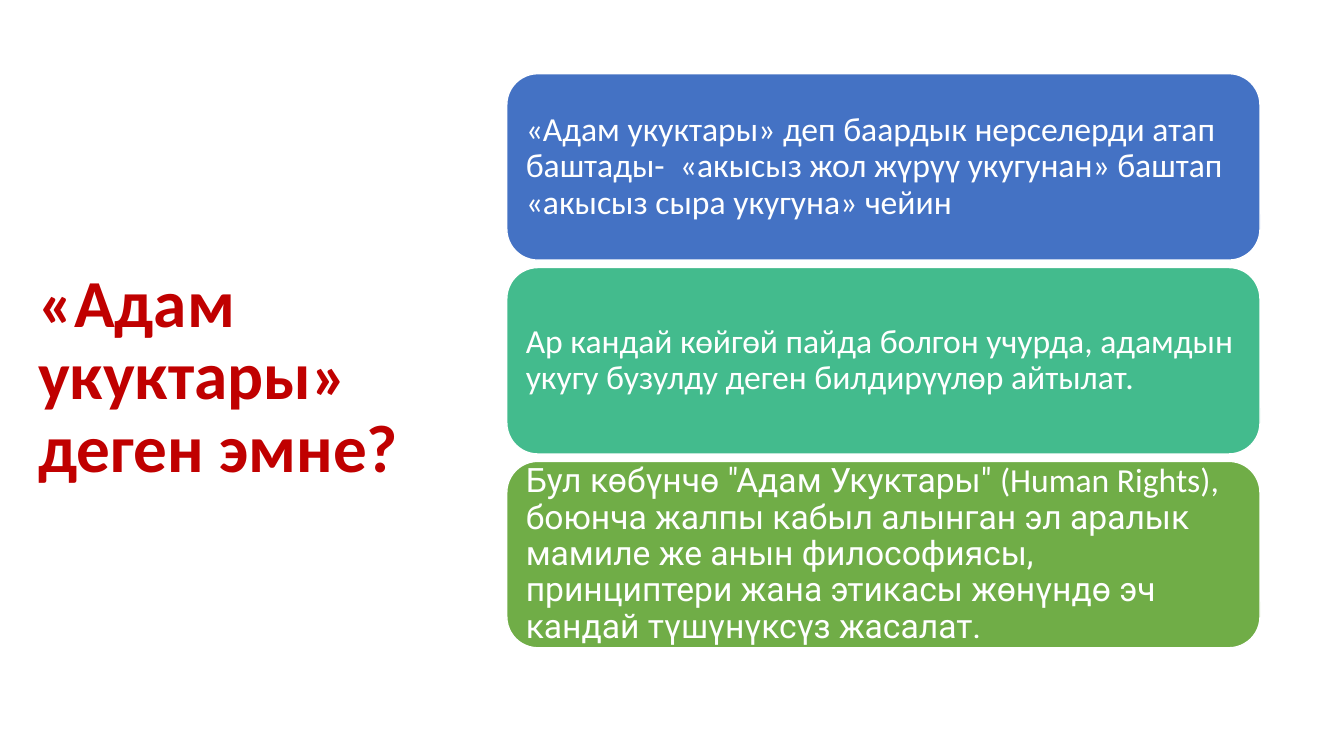
from pptx import Presentation
from pptx.dml.color import RGBColor
from pptx.enum.shapes import MSO_SHAPE
from pptx.enum.text import MSO_ANCHOR, MSO_AUTO_SIZE, PP_ALIGN
from pptx.util import Inches, Pt

ROUNDED = MSO_SHAPE.ROUNDED_RECTANGLE
MIDDLE = MSO_ANCHOR.MIDDLE
NO_FIT = MSO_AUTO_SIZE.NONE
LEFT = PP_ALIGN.LEFT

RED = RGBColor(0xC0, 0x00, 0x00)
WHITE = RGBColor(0xFF, 0xFF, 0xFF)
BLUE = RGBColor(0x44, 0x72, 0xC4)
TEAL = RGBColor(0x43, 0xBB, 0x8D)
GREEN = RGBColor(0x70, 0xAD, 0x47)

BODY_FONT = "Calibri"
ACCENT_FONT = "Roboto"
COLUMNS, ROWS = 48, 39
TITLE_ONLY = 5

TITLE = "«Адам укуктары» деген эмне?"
CARDS = [
    (BLUE, [("«Адам укуктары» деп баардык нерселерди атап баштады-  «акысыз жол "
             "жүрүү укугунан» баштап «акысыз сыра укугуна» чейин", BODY_FONT)]),
    (TEAL, [("Ар кандай көйгөй пайда болгон учурда, адамдын укугу бузулду деген "
             "билдирүүлөр айтылат.", BODY_FONT)]),
    (GREEN, [('Бул көбүнчө "Адам Укуктары" ', ACCENT_FONT),
             ("(Human Rights), ", BODY_FONT),
             ("боюнча жалпы кабыл алынган эл аралык мамиле же анын философиясы, "
              "принциптери жана этикасы жөнүндө эч кандай түшүнүксүз жасалат.",
              ACCENT_FONT)]),
]


def apply(target, values):
    for name, value in values.items():
        setattr(target, name, value)


class SlideBuilder:
    frame_format = {"word_wrap": True, "auto_size": NO_FIT, "vertical_anchor": MIDDLE,
                    "margin_left": Inches(0.1), "margin_right": Inches(0.1),
                    "margin_top": Inches(0.1), "margin_bottom": Inches(0.1)}
    paragraph_format = {"alignment": LEFT, "line_spacing": 0.9}
    title_format = {"size": Pt(48), "bold": True}
    card_format = {"size": Pt(24), "bold": False}

    def __init__(self, presentation):
        self.column = presentation.slide_width / COLUMNS
        self.row = presentation.slide_height / ROWS
        self.slide = presentation.slides.add_slide(presentation.slide_layouts[TITLE_ONLY])

    def box(self, left, top, width, height):
        return (round(left * self.column), round(top * self.row),
                round(width * self.column), round(height * self.row))

    def fill_text(self, shape, pieces, font_format, color):
        apply(shape.text_frame, self.frame_format)
        paragraph = shape.text_frame.paragraphs[0]
        apply(paragraph, self.paragraph_format)
        for text, font_name in pieces:
            run = paragraph.add_run()
            run.text = text
            apply(run.font, {**font_format, "name": font_name})
            run.font.color.rgb = color

    def title(self, text, *area):
        shape = self.slide.shapes.title
        apply(shape, dict(zip(("left", "top", "width", "height"), self.box(*area))))
        self.fill_text(shape, [(text, BODY_FONT)], self.title_format, RED)

    def card(self, pieces, color, *area):
        shape = self.slide.shapes.add_shape(ROUNDED, *self.box(*area))
        shape.shadow.inherit = False
        shape.fill.solid()
        shape.fill.fore_color.rgb = color
        shape.line.color.rgb = WHITE
        shape.line.width = Pt(1)
        self.fill_text(shape, pieces, self.card_format, WHITE)


def main():
    presentation = Presentation()
    presentation.slide_width = Inches(13.33)
    presentation.slide_height = Inches(7.5)
    builder = SlideBuilder(presentation)
    builder.title(TITLE, 1, 2.5, 14, 34)
    for index, (color, pieces) in enumerate(CARDS):
        builder.card(pieces, color, 18.1, 3.8 + 10 * index, 26.9, 9.62)
    presentation.save("out.pptx")


if __name__ == "__main__":
    main()
